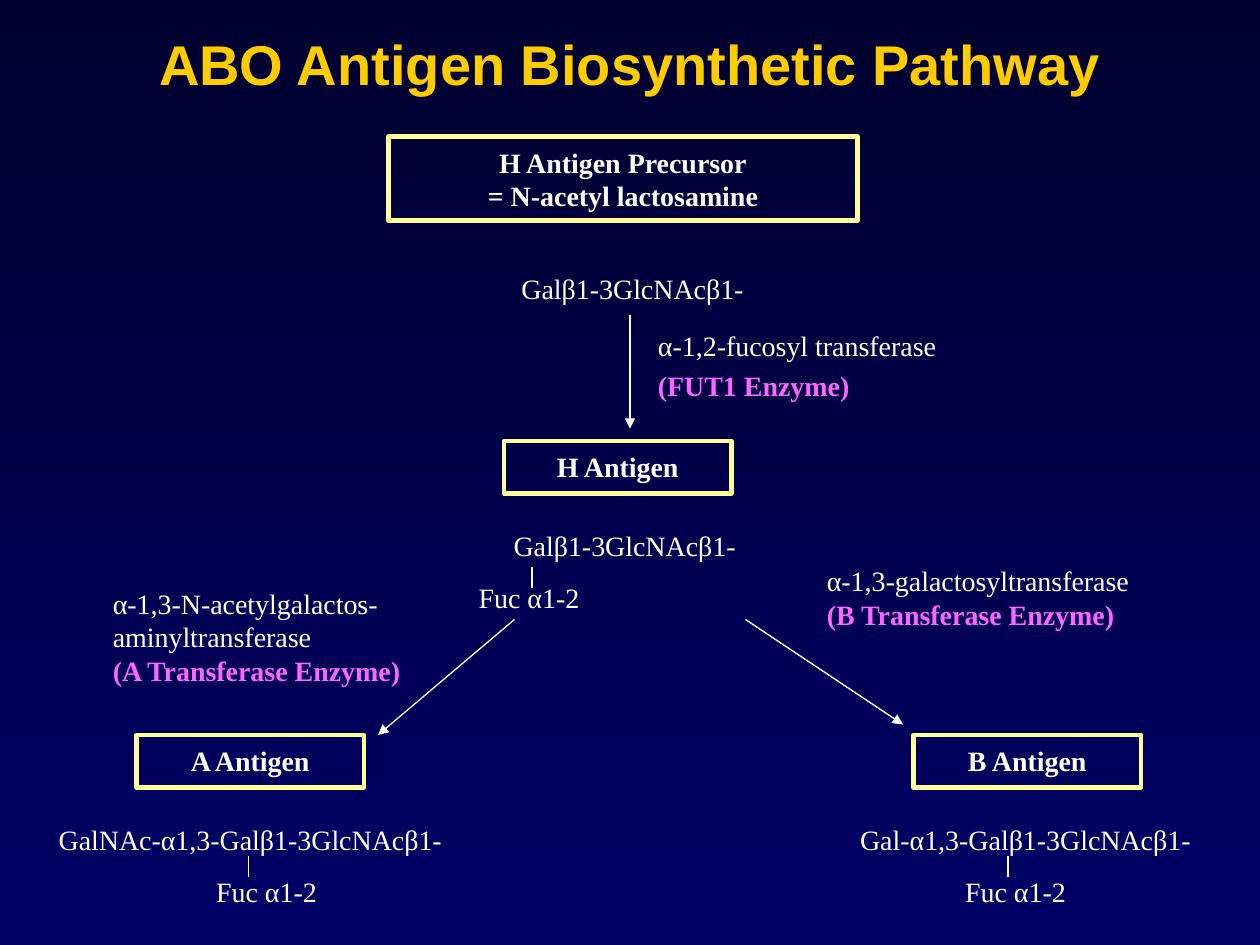
import pptx
import pptx.dml.color
import pptx.enum.shapes
import pptx.enum.text
import pptx.oxml
import pptx.oxml.ns
import pptx.util

Pt = pptx.util.Pt
ALIGN = pptx.enum.text.PP_ALIGN
ANCHOR = pptx.enum.text.MSO_ANCHOR

WHITE, PINK, YELLOW, GOLD = "FFFFFF", "FF66FF", "FFFF99", "FFCC00"
NAVY, MIDNIGHT = "000066", "00002F"
BODY_FONT, TITLE_FONT = "Times New Roman", "Arial"


def rgb(hex_color):
    return pptx.dml.color.RGBColor.from_string(hex_color)


def set_background(s):
    fill = s.background.fill
    fill.gradient()
    fill.gradient_angle = 90
    for stop, color in zip(fill.gradient_stops, (NAVY, MIDNIGHT)):
        stop.color.rgb = rgb(color)


def set_text(sp, lines, inset, align=ALIGN.LEFT, bold=False, size=16,
             font=BODY_FONT, anchor=ANCHOR.TOP):
    """Write (text, color) lines as one paragraph; pink lines are bold."""
    tf = sp.text_frame
    tf.word_wrap = True
    tf.vertical_anchor = anchor
    tf.margin_left = tf.margin_right = Pt(inset)
    tf.margin_top = tf.margin_bottom = Pt(inset)
    p = tf.paragraphs[0]
    p.alignment = align
    p.font.size, p.font.name = Pt(size), font
    for i, (text, color) in enumerate(lines):
        if i:
            p.add_line_break()
        r = p.add_run()
        r.text = text
        r.font.bold = bold or color == PINK
        r.font.color.rgb = rgb(color)
        r.font.size, r.font.name = Pt(size), font


def add_label(shapes, box, lines, inset=8, **style):
    sp = shapes.add_textbox(*map(Pt, box))
    set_text(sp, lines, inset, **style)


def add_antigen_box(s, box, *lines):
    sp = s.shapes.add_shape(pptx.enum.shapes.MSO_SHAPE.RECTANGLE, *map(Pt, box))
    sp.shadow.inherit = False
    sp.fill.background()
    sp.line.color.rgb = rgb(YELLOW)
    sp.line.width = Pt(2.5)
    set_text(sp, [(line, WHITE) for line in lines], 5, ALIGN.CENTER, bold=True)


def add_line(shapes, x1, y1, x2, y2, arrow=False):
    c = shapes.add_connector(pptx.enum.shapes.MSO_CONNECTOR.STRAIGHT,
                             Pt(x1), Pt(y1), Pt(x2), Pt(y2))
    c.line.color.rgb = rgb(WHITE)
    c.line.width = Pt(0.75)
    if arrow:
        ns = pptx.oxml.ns.nsdecls("a")
        tail = pptx.oxml.parse_xml(f'<a:tailEnd {ns} type="triangle"/>')
        c.line._get_or_add_ln().append(tail)
    pptx.oxml.ns.qn("a:effectLst")
    c._element.spPr.append(
        pptx.oxml.parse_xml(f'<a:effectLst {pptx.oxml.ns.nsdecls("a")}/>'))


def add_sugar_chain(s, box, chain, fucose_x, bond_x, fucose_drop, bond_drop):
    """Place a chain with a fucose branch; drops are measured from the box top."""
    x, y, w, h = box
    shapes = s.shapes.add_group_shape().shapes
    add_label(shapes, box, [(chain, WHITE)])
    add_label(shapes, (fucose_x, y + fucose_drop, 85, h), [("Fuc α1-2", WHITE)])
    add_line(shapes, bond_x, y + bond_drop, bond_x, y + bond_drop + 12)


def add_precursor_stage(s):
    add_antigen_box(s, (222, 78, 268, 48),
                    "H Antigen Precursor", "= N-acetyl lactosamine")
    add_label(s.shapes, (263, 150, 197, 28), [("Galβ1-3GlcNAcβ1-", WHITE)],
              inset=5, align=ALIGN.CENTER)
    add_line(s.shapes, 360, 180, 360, 245, arrow=True)
    enzyme = s.shapes.add_group_shape().shapes
    add_label(enzyme, (368, 180, 240, 32), [("α-1,2-fucosyl transferase", WHITE)])
    add_label(enzyme, (368, 202.5, 175, 32), [("(FUT1 Enzyme)", PINK)])


def add_h_stage(s):
    add_antigen_box(s, (288, 252, 130, 30), "H Antigen")
    add_sugar_chain(s, (285.5, 294, 175, 32), "Galβ1-3GlcNAcβ1-",
                    265.5, 304, 30, 30)


def add_a_branch(s):
    add_line(s.shapes, 294, 354, 216, 420, arrow=True)
    add_label(s.shapes, (59.5, 330, 205, 64),
              [("α-1,3-N-acetylgalactos-", WHITE), ("aminyltransferase", WHITE),
               ("(A Transferase Enzyme)", PINK)], inset=5)
    add_antigen_box(s, (78, 420, 130, 30), "A Antigen")
    add_sugar_chain(s, (25.5, 462, 284, 32), "GalNAc-α1,3-Galβ1-3GlcNAcβ1-",
                    115.5, 142, 30, 27)


def add_b_branch(s):
    add_line(s.shapes, 426, 354, 516, 414, arrow=True)
    add_label(s.shapes, (467.5, 317, 223, 46),
              [("α-1,3-galactosyltransferase", WHITE),
               ("(B Transferase Enzyme)", PINK)], inset=5)
    add_antigen_box(s, (522, 420, 130, 30), "B Antigen")
    add_sugar_chain(s, (483.5, 462, 229, 32), "Gal-α1,3-Galβ1-3GlcNAcβ1-",
                    543.5, 576, 30, 27)


def main():
    prs = pptx.Presentation()
    prs.slide_width, prs.slide_height = Pt(720), Pt(540)
    s = prs.slides.add_slide(prs.slide_layouts[6])
    set_background(s)
    add_label(s.shapes, (54, 12, 612, 48),
              [("ABO Antigen Biosynthetic Pathway", GOLD)], inset=3.6,
              align=ALIGN.CENTER, bold=True, size=32, font=TITLE_FONT,
              anchor=ANCHOR.MIDDLE)
    add_precursor_stage(s)
    add_h_stage(s)
    add_a_branch(s)
    add_b_branch(s)
    prs.save("out.pptx")


if __name__ == "__main__":
    main()
